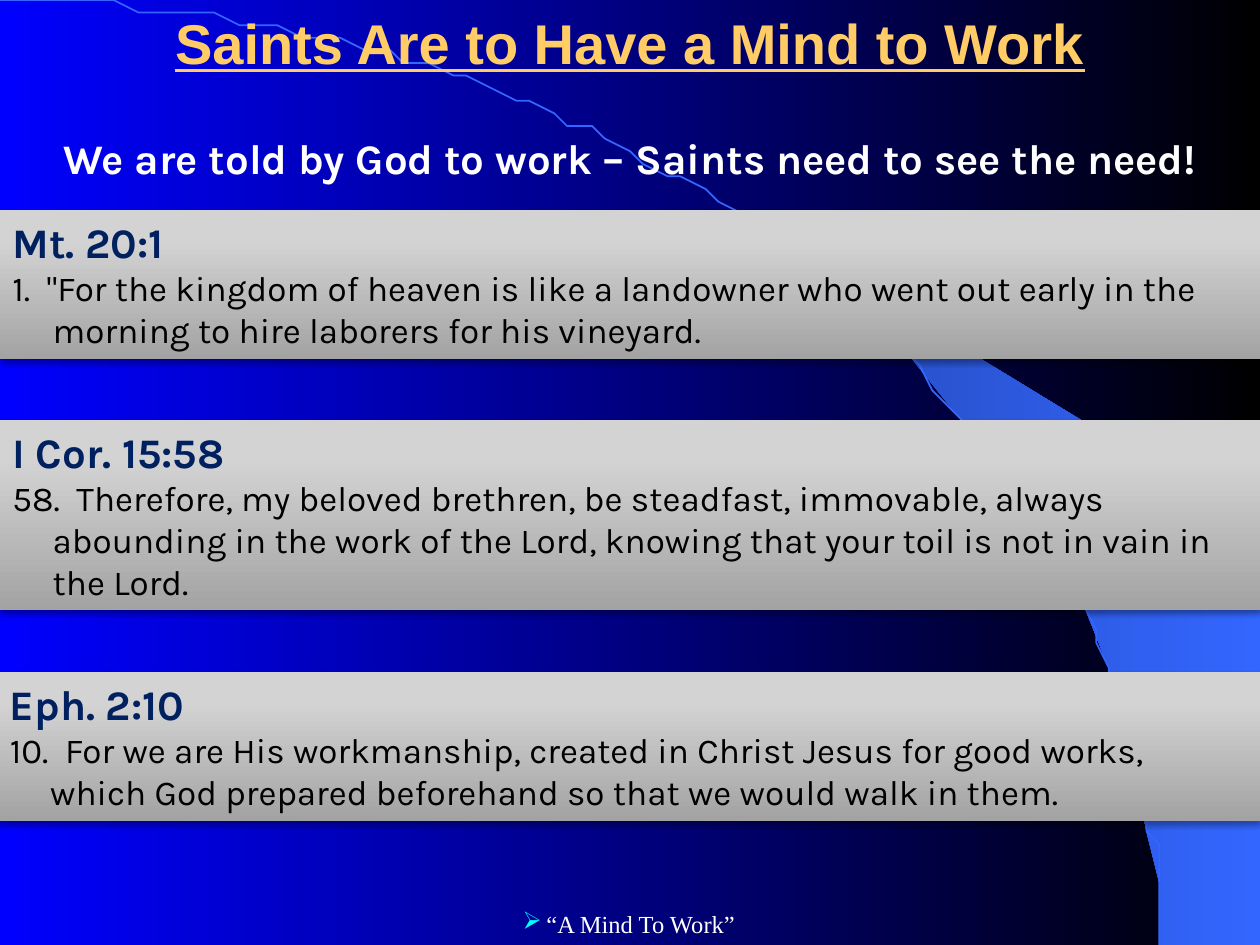
from copy import deepcopy
from dataclasses import dataclass

from lxml import etree
from pptx import Presentation
from pptx.dml.color import RGBColor
from pptx.enum.shapes import MSO_SHAPE
from pptx.enum.text import MSO_ANCHOR, MSO_AUTO_SIZE, PP_ALIGN
from pptx.oxml.ns import qn
from pptx.util import Inches, Pt

RECTANGLE = MSO_SHAPE.RECTANGLE
TOP, MIDDLE = MSO_ANCHOR.TOP, MSO_ANCHOR.MIDDLE
LEFT, CENTER = PP_ALIGN.LEFT, PP_ALIGN.CENTER
FIT_SHAPE, NO_FIT = MSO_AUTO_SIZE.SHAPE_TO_FIT_TEXT, MSO_AUTO_SIZE.NONE
COLUMNS, ROWS = 60, 45


@dataclass(frozen=True)
class Theme:
    gold: str = "FFCC66"
    white: str = "FFFFFF"
    navy: str = "002060"
    black: str = "000000"
    arc: str = "3366FF"
    bullet: str = "00FFFF"
    backdrop: tuple = ((0, "0000FF"), (100, "000000"))
    swoosh: tuple = ((0, "2449B6"), (100, "3366FF"))
    panel: tuple = ((0, "A3A3A3"), (80, "D3D3D3"), (100, "D4D4D4"))
    title_size: int = 32
    heading_size: int = 24
    verse_size: int = 20
    footer_size: int = 14
    title_font: str = "Arial"
    body_font: str = "Karla"
    footer_font: str = "Times New Roman"


class SlideBuilder:
    def __init__(self, deck, theme):
        self.theme = theme
        self.width, self.height = deck.slide_width, deck.slide_height
        self.slide = deck.slides.add_slide(deck.slide_layouts[6])
        self.shapes = self.slide.shapes
        self.gradient(self.slide.background.fill, theme.backdrop)

    def box(self, column, row, columns, rows):
        """Turn grid columns and rows into slide lengths."""
        across, down = self.width / COLUMNS, self.height / ROWS
        return (round(column * across), round(row * down),
                round(columns * across), round(rows * down))

    def gradient(self, fill, stops, angle=0):
        fill.gradient()
        fill.gradient_angle = angle
        last = fill.gradient_stops[-1]._gs
        for _ in stops[2:]:
            last.addnext(deepcopy(last))
        for stop, (percent, color) in zip(fill.gradient_stops, stops):
            stop.position = percent / 100
            stop.color.rgb = RGBColor.from_string(color)

    def outline(self, points, closed):
        """Draw points given in hundredths of the slide width."""
        builder = self.shapes.build_freeform(*points[0], scale=self.width / 100)
        builder.add_line_segments(points[1:], close=closed)
        shape = builder.convert_to_shape()
        shape.shadow.inherit = False
        return shape

    def swoosh(self, points):
        shape = self.outline(points, closed=True)
        self.gradient(shape.fill, self.theme.swoosh)
        shape.line.fill.background()

    def arc(self, points):
        shape = self.outline(points, closed=False)
        shape.fill.background()
        shape.line.color.rgb = RGBColor.from_string(self.theme.arc)
        shape.line.width = Pt(1)

    def frame(self, shape, anchor, auto_size):
        settings = {"word_wrap": True, "vertical_anchor": anchor, "auto_size": auto_size}
        for name, value in settings.items():
            setattr(shape.text_frame, name, value)
        return shape.text_frame

    def add_words(self, paragraph, text, color, align=LEFT, hang=0, **font):
        paragraph.alignment = align
        properties = paragraph._p.get_or_add_pPr()
        properties.set("marL", str(Inches(hang)))
        properties.set("indent", str(-Inches(hang)))
        run = paragraph.add_run()
        run.text = text
        run.font.color.rgb = RGBColor.from_string(color)
        for name, value in font.items():
            setattr(run.font, name, value)

    def text(self, place, text, color, anchor=MIDDLE, auto_size=NO_FIT, **style):
        frame = self.frame(self.shapes.add_textbox(*self.box(*place)), anchor, auto_size)
        self.add_words(frame.paragraphs[0], text, color, align=CENTER, **style)
        return frame.paragraphs[0]

    def arrow_bullet(self, paragraph):
        properties = paragraph._p.get_or_add_pPr()
        color = etree.SubElement(properties, qn("a:buClr"))
        etree.SubElement(color, qn("a:srgbClr"), val=self.theme.bullet)
        etree.SubElement(properties, qn("a:buFont"), typeface="Wingdings")
        etree.SubElement(properties, qn("a:buChar"), char="Ø")

    def drop_shadow(self, shape):
        shape.shadow.inherit = False
        effects = shape._element.spPr.find(qn("a:effectLst"))
        shadow = etree.SubElement(effects, qn("a:outerShdw"), blurRad=str(Pt(3.1)),
                                  dist=str(Pt(1.8)), dir="5400000", rotWithShape="0")
        color = etree.SubElement(shadow, qn("a:srgbClr"), val=self.theme.black)
        etree.SubElement(color, qn("a:alpha"), val="35000")

    def scripture(self, place, reference, verse):
        panel = self.shapes.add_shape(RECTANGLE, *self.box(*place))
        self.gradient(panel.fill, self.theme.panel, angle=90)
        panel.line.fill.background()
        self.drop_shadow(panel)
        frame = self.frame(panel, TOP, FIT_SHAPE)
        theme = self.theme
        self.add_words(frame.paragraphs[0], reference, theme.navy, hang=0.5,
                       name=theme.body_font, size=Pt(theme.heading_size), bold=True)
        self.add_words(frame.add_paragraph(), verse, theme.black, hang=0.32,
                       name=theme.body_font, size=Pt(theme.verse_size), bold=False)


SWOOSH = [(92, 74.8), (99.9, 74.9), (99.9, 42.3), (58.9, 17.3), (62.4, 19.9),
          (65.3, 22.2), (68.5, 25), (71.6, 28), (76.2, 33), (80.3, 38.4),
          (83.2, 43.1), (85.8, 47.9), (87.8, 52.8), (89.3, 57.2), (90.3, 60.9),
          (91.3, 65.6), (91.7, 69.6)]

SCRIPTURES = [
    ((0, 10, 60, 7.08), "Mt. 20:1",
     "1.  \"For the kingdom of heaven is like a landowner who went out early in the "
     "morning to hire laborers for his vineyard."),
    ((0, 20, 60, 9.06), "I Cor. 15:58",
     "58.  Therefore, my beloved brethren, be steadfast, immovable, always abounding in "
     "the work of the Lord, knowing that your toil is not in vain in the Lord."),
    ((-0.12, 32, 60.12, 7.08), "Eph. 2:10",
     "10.  For we are His workmanship, created in Christ Jesus for good works, which God "
     "prepared beforehand so that we would walk in them."),
]


def arc_points(steps=80):
    """Sample the cubic curve from the top left corner to the bottom right."""
    controls = [(0, 0), (50.8, 0), (92, 33.5), (92, 74.9)]
    points = []
    for step in range(steps + 1):
        t = step / steps
        weights = ((1 - t) ** 3, 3 * t * (1 - t) ** 2, 3 * t * t * (1 - t), t ** 3)
        points.append(tuple(sum(w * c for w, c in zip(weights, axis))
                            for axis in zip(*controls)))
    return points


def main():
    deck = Presentation()
    deck.slide_width, deck.slide_height = Inches(10), Inches(7.5)
    theme = Theme()
    page = SlideBuilder(deck, theme)

    # Background curves
    page.swoosh(SWOOSH)
    page.arc(arc_points())

    # Footer
    footer = page.text((0, 43, 59.88, 2), "“A Mind To Work”", theme.white, hang=0.19,
                       name=theme.footer_font, size=Pt(theme.footer_size))
    page.arrow_bullet(footer)

    # Title and lead sentence
    page.text((0, 0, 60, 4), "Saints Are to Have a Mind to Work", theme.gold,
              name=theme.title_font, size=Pt(theme.title_size), bold=True, underline=True)
    page.text((0, 6, 60, 3), "We are told by God to work – Saints need to see the need!",
              theme.white, anchor=TOP, auto_size=FIT_SHAPE, hang=0.5,
              name=theme.body_font, size=Pt(theme.heading_size), bold=True)

    # Scripture panels
    for place, reference, verse in SCRIPTURES:
        page.scripture(place, reference, verse)

    deck.save("out.pptx")


if __name__ == "__main__":
    main()
